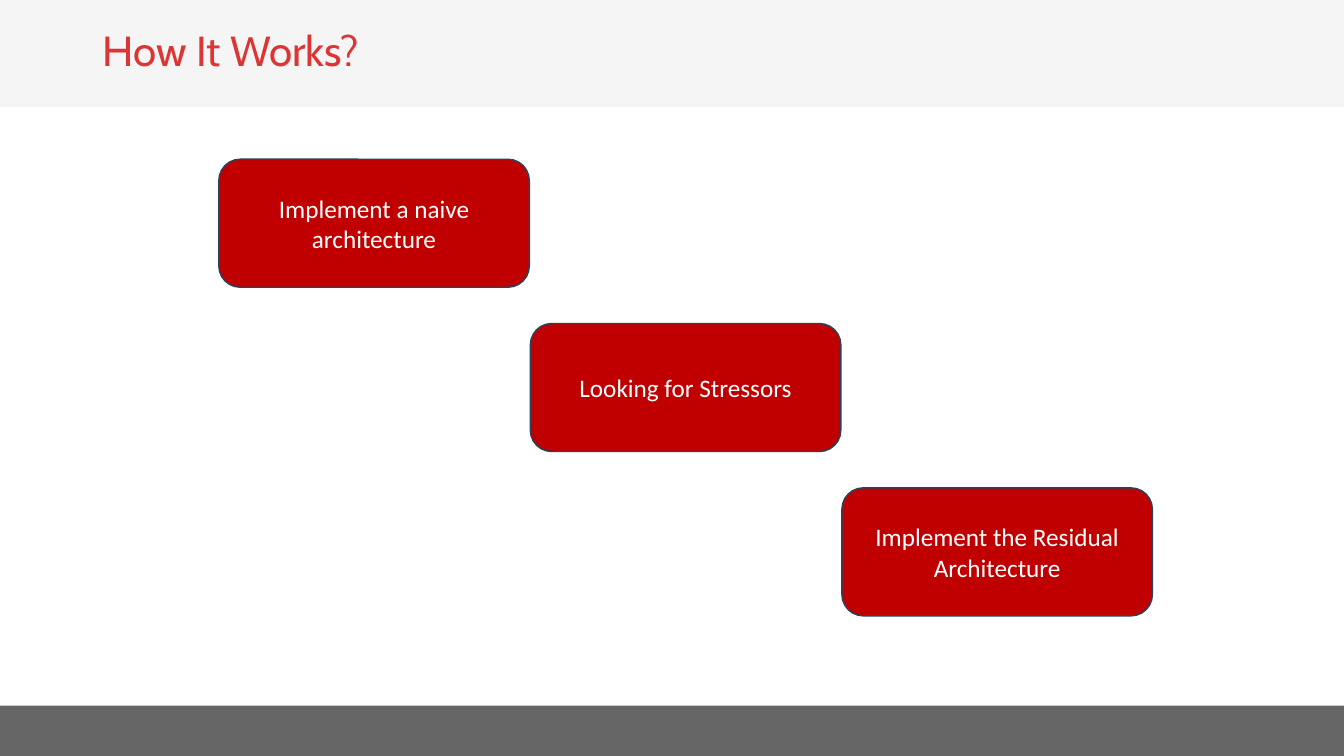
from pptx import Presentation
from pptx.dml.color import RGBColor
from pptx.enum.shapes import MSO_SHAPE
from pptx.enum.text import MSO_ANCHOR, MSO_AUTO_SIZE, PP_ALIGN
from pptx.util import Inches, Pt

TITLE = "How It Works?"
STEPS = [
    "Implement a naive architecture",
    "Looking for Stressors",
    "Implement the Residual Architecture",
]

WHITE = RGBColor(0xFF, 0xFF, 0xFF)
HEADER_GREY = RGBColor(0xF5, 0xF5, 0xF5)
FOOTER_GREY = RGBColor(0x66, 0x66, 0x66)
TITLE_RED = RGBColor(0xDB, 0x36, 0x35)
STEP_RED = RGBColor(0xC0, 0x00, 0x00)
STEP_EDGE = RGBColor(0x28, 0x44, 0x5D)

RECT = MSO_SHAPE.RECTANGLE
STEP_SHAPE = MSO_SHAPE.FLOWCHART_ALTERNATE_PROCESS
MIDDLE = MSO_ANCHOR.MIDDLE
LEFT, CENTER = PP_ALIGN.LEFT, PP_ALIGN.CENTER
NO_AUTOFIT = MSO_AUTO_SIZE.NONE

# Lengths in inches
SLIDE_W, SLIDE_H = 13.33, 7.5
HEADER_H, FOOTER_H = 1.06, 0.5
STEP_W, STEP_H = 3.08, 1.27
FIRST_X, FIRST_Y = 2.17, 1.58
PITCH_X, PITCH_Y = 3.09, 1.63


def add_box(slide, kind, x, y, w, h, fill):
    sp = slide.shapes.add_shape(kind, Inches(x), Inches(y), Inches(w), Inches(h))
    sp.shadow.inherit = False
    sp.fill.solid()
    sp.fill.fore_color.rgb = fill
    sp.line.fill.background()
    return sp


def write(shape, text, font, size, color, align):
    tf = shape.text_frame
    tf.word_wrap = True
    tf.auto_size = NO_AUTOFIT
    tf.vertical_anchor = MIDDLE
    p = tf.paragraphs[0]
    p.alignment = align
    r = p.add_run()
    r.text = text
    r.font.name = font
    r.font.size = Pt(size)
    r.font.color.rgb = color


prs = Presentation()
prs.slide_width, prs.slide_height = Inches(SLIDE_W), Inches(SLIDE_H)
s = prs.slides.add_slide(prs.slide_layouts[5])

add_box(s, RECT, 0, SLIDE_H - FOOTER_H, SLIDE_W, FOOTER_H, FOOTER_GREY)
add_box(s, RECT, 0, 0, SLIDE_W, HEADER_H, HEADER_GREY)

title = s.shapes.title
title.left, title.top = Inches(0.92), Inches(0.04)
title.width, title.height = Inches(10.58), Inches(0.97)
write(title, TITLE, "Cabin", 30, TITLE_RED, LEFT)
title.text_frame.paragraphs[0].line_spacing = 0.9
# Bring the title in front of the header band
title.element.getparent().append(title.element)

for i, step in enumerate(STEPS):
    sp = add_box(s, STEP_SHAPE, FIRST_X + i * PITCH_X, FIRST_Y + i * PITCH_Y,
                 STEP_W, STEP_H, STEP_RED)
    sp.line.color.rgb = STEP_EDGE
    sp.line.width = Pt(1)
    write(sp, step, "Calibri", 18, WHITE, CENTER)

prs.save("out.pptx")
